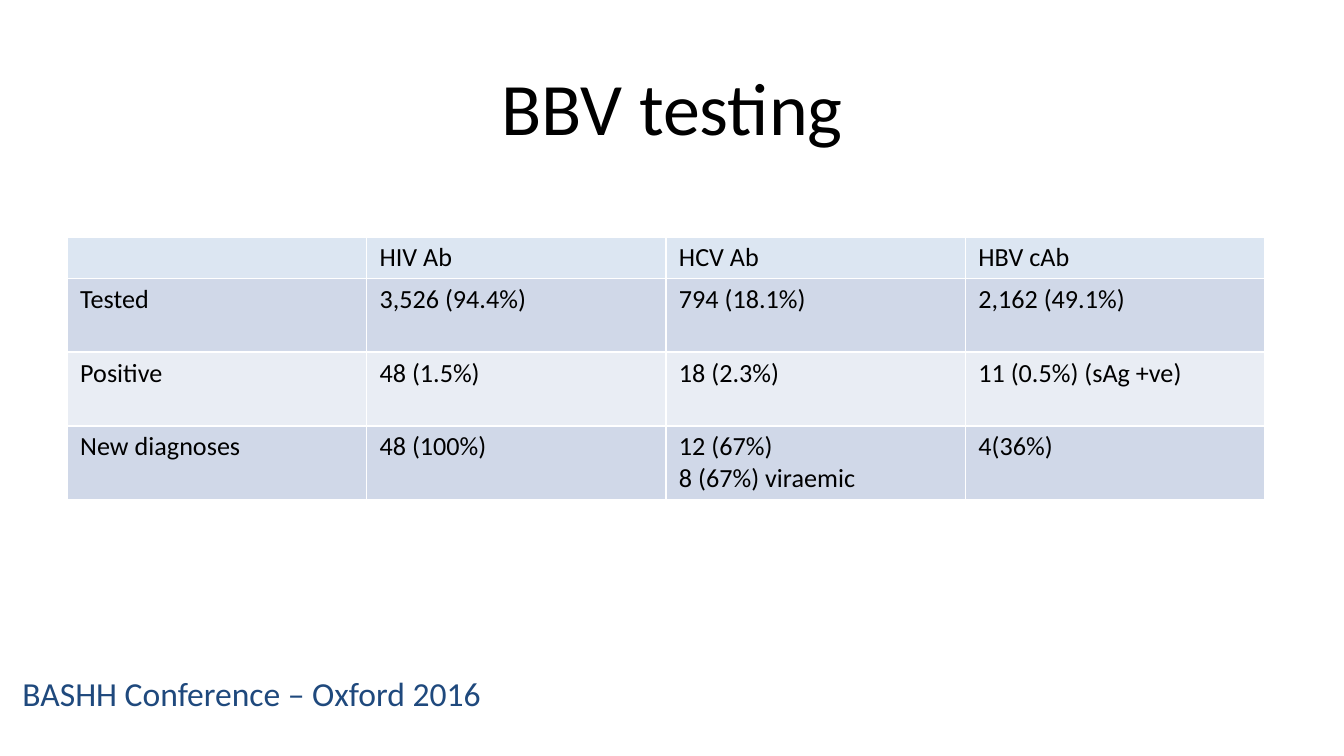
from lxml import etree
from pptx import Presentation
from pptx import util as u
from pptx.dml import color
from pptx.enum import text
from pptx.oxml import ns

Pt = u.Pt
FONT = "Calibri"
COLORS = {
    "ink": "000000",
    "navy": "1F497D",
    "header": "DCE6F2",
    "band": "D0D8E8",
    "plain": "E9EDF4",
    "border": "FFFFFF",
}
ROWS = [
    ["", "HIV Ab", "HCV Ab", "HBV cAb"],
    ["Tested", "3,526 (94.4%)", "794 (18.1%)", "2,162 (49.1%)"],
    ["Positive", "48 (1.5%)", "18 (2.3%)", "11 (0.5%) (sAg +ve)"],
    ["New diagnoses", "48 (100%)", "12 (67%)\n8 (67%) viraemic", "4(36%)"],
]
ROW_FILLS = ["header", "band", "plain", "band"]
ROW_HEIGHTS = [22, 39.5, 39.5, 39.5]


def rgb(name):
    return color.RGBColor.from_string(COLORS[name])


def write(frame, words, size, ink="ink", align=text.PP_ALIGN.LEFT):
    frame.text = words
    for para in frame.paragraphs:
        para.alignment = align
        para.font.name = FONT
        para.font.size = Pt(size)
        para.font.color.rgb = rgb(ink)


def place(shape, left, top, width, height):
    shape.left, shape.top = Pt(left), Pt(top)
    shape.width, shape.height = Pt(width), Pt(height)


def add_borders(cell):
    properties = cell._tc.get_or_add_tcPr()
    for index, side in enumerate(("lnL", "lnR", "lnT", "lnB")):
        line = etree.Element(ns.qn(f"a:{side}"), w=str(Pt(1)))
        fill = etree.SubElement(line, ns.qn("a:solidFill"))
        etree.SubElement(fill, ns.qn("a:srgbClr"), val=COLORS["border"])
        properties.insert(index, line)


def set_title(page, left, top, width, height):
    title = page.shapes.title
    place(title, left, top, width, height)
    frame = title.text_frame
    write(frame, "BBV testing", 39.6, align=text.PP_ALIGN.CENTER)
    frame.auto_size = text.MSO_AUTO_SIZE.NONE
    frame.vertical_anchor = text.MSO_ANCHOR.MIDDLE


def add_results(page, left, top, width):
    frame = page.shapes.add_table(
        len(ROWS), len(ROWS[0]), Pt(left), Pt(top), Pt(width), Pt(sum(ROW_HEIGHTS))
    )
    table = frame.table
    table.first_row = False
    table.horz_banding = False
    for column in table.columns:
        column.width = Pt(width / len(ROWS[0]))
    for row, words, fill, height in zip(table.rows, ROWS, ROW_FILLS, ROW_HEIGHTS):
        row.height = Pt(height)
        for cell, value in zip(row.cells, words):
            cell.margin_left = cell.margin_right = Pt(7)
            cell.margin_top = cell.margin_bottom = Pt(2.7)
            cell.fill.solid()
            cell.fill.fore_color.rgb = rgb(fill)
            add_borders(cell)
            write(cell.text_frame, value, 14)


def add_footer(page, left, top, width, height):
    box = page.shapes.add_textbox(Pt(left), Pt(top), Pt(width), Pt(height))
    box.text_frame.word_wrap = True
    write(box.text_frame, "BASHH Conference – Oxford 2016", 18, "navy")


def main():
    deck = Presentation()
    deck.slide_width, deck.slide_height = Pt(720), Pt(405)
    page = deck.slides.add_slide(deck.slide_layouts[5])
    add_footer(page, 5, 357, 344, 48)
    set_title(page, 36, 23, 648, 68)
    add_results(page, 36, 127, 641.6)
    deck.save("out.pptx")


if __name__ == "__main__":
    main()
